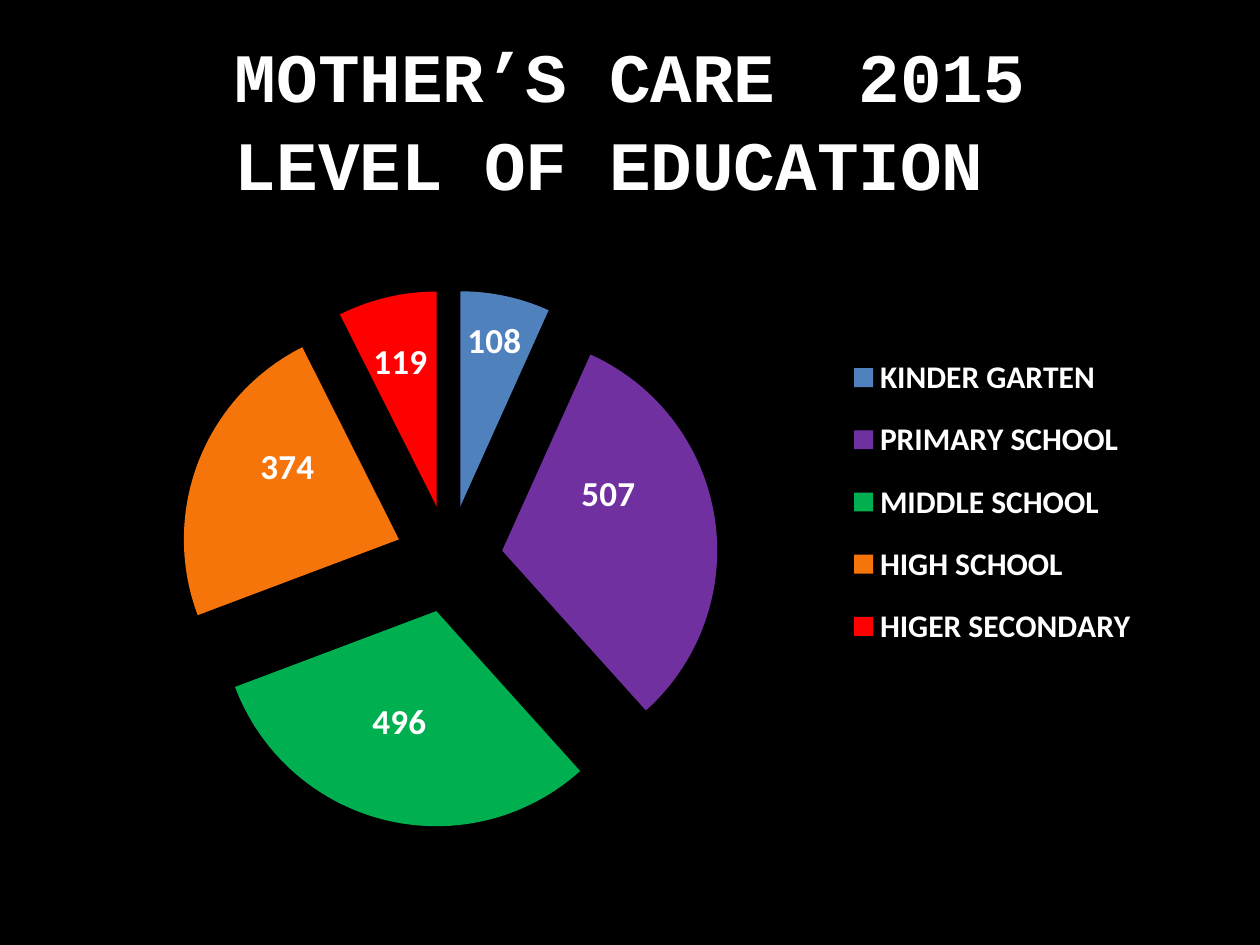
from lxml.etree import SubElement
from pptx import Presentation
from pptx.chart.data import CategoryChartData
from pptx.dml.color import RGBColor
from pptx.enum.chart import XL_CHART_TYPE, XL_LABEL_POSITION, XL_LEGEND_POSITION
from pptx.enum.text import MSO_ANCHOR, PP_ALIGN
from pptx.oxml.ns import qn
from pptx.util import Pt

WHITE = "FFFFFF"
# name, value, colour, label shift as fractions of the chart
LEVELS = [
    ("KINDER GARTEN", 108, "4F81BD", (0.01, -0.09)),
    ("PRIMARY SCHOOL", 507, "7030A0", (0, -0.06)),
    ("MIDDLE SCHOOL", 496, "00B050", (-0.01, 0.01)),
    ("HIGH SCHOOL", 374, "F5750B", (-0.01, -0.05)),
    ("HIGER SECONDARY", 119, "FF0000", (-0.01, -0.06)),
]


def color(code):
    return RGBColor.from_string(code)


def style(font, name, size, code, bold=True):
    font.name, font.size, font.bold = name, Pt(size), bold
    font.color.rgb = color(code)


def place(owner, index, **spots):
    """Give a chart part a manual layout at a child index."""
    for old in owner.findall(qn("c:layout")):
        owner.remove(old)
    layout = SubElement(owner, qn("c:layout"))
    owner.insert(index, layout)
    manual = SubElement(layout, qn("c:manualLayout"))
    for tag, value in spots.items():
        SubElement(manual, qn(f"c:{tag}")).set("val", str(value))


class Deck:
    head, body = "Courier New", "Calibri"

    def __init__(self):
        self.prs = Presentation()
        self.prs.slide_width, self.prs.slide_height = Pt(720), Pt(540)
        self.slide = self.prs.slides.add_slide(self.prs.slide_layouts[5])
        fill = self.slide.background.fill
        fill.solid()
        fill.fore_color.rgb = color("000000")

    def title(self, lines, left, top, width, height):
        box = self.slide.shapes.title
        box.left, box.top, box.width, box.height = map(Pt, (left, top, width, height))
        box.text_frame.vertical_anchor = MSO_ANCHOR.MIDDLE
        para = box.text_frame.paragraphs[0]
        para.alignment = PP_ALIGN.CENTER
        para.line_spacing = 1.06
        for i, line in enumerate(lines):
            if i:
                para.add_line_break()
            run = para.add_run()
            run.text = line
            style(run.font, self.head, 39.6, WHITE)

    def pie(self, levels, left, top, width, height):
        names, values, fills, shifts = zip(*levels)
        data = CategoryChartData()
        data.categories = names
        data.add_series("Series 1", values)
        chart = self.slide.shapes.add_chart(
            XL_CHART_TYPE.PIE, *map(Pt, (left, top, width, height)), data).chart
        chart.has_title = False
        style(chart.font, self.body, 18, "000000", False)
        plot = chart.plots[0]
        plot.vary_by_categories = True
        area = chart._chartSpace.find(".//" + qn("c:plotArea"))
        place(area, 0, layoutTarget="inner", xMode="edge", yMode="edge",
              x=0.13, y=0.1, w=0.47, h=0.81)
        self.legend(chart)
        self.slices(plot.series[0], fills, shifts)

    def legend(self, chart):
        chart.has_legend = True
        key = chart.legend
        key.position = XL_LEGEND_POSITION.RIGHT
        key.include_in_layout = False
        style(key.font, self.body, 18, WHITE)
        place(key._element, 1, xMode="edge", yMode="edge",
              x=0.7, y=0.17, w=0.28, h=0.5)

    def slices(self, series, fills, shifts):
        root = series._element
        burst = SubElement(root, qn("c:explosion"))
        burst.set("val", "25")
        root.find(qn("c:tx")).addnext(burst)
        labels = series.data_labels
        labels.show_value = True
        style(labels.font, self.body, 20, WHITE)
        for i, code in enumerate(fills):
            point = series.points[i]
            point.format.fill.solid()
            point.format.fill.fore_color.rgb = color(code)
            style(point.data_label.font, self.body, 20, WHITE)
            point.data_label.position = XL_LABEL_POSITION.CENTER
        for label, (x, y) in zip(labels._element.findall(qn("c:dLbl")), shifts):
            place(label, 1, x=x, y=y)


def main():
    deck = Deck()
    deck.title(["MOTHER’S CARE  2015", "LEVEL OF EDUCATION "], 36, 21.6, 648, 90)
    deck.pie(LEVELS, 18, 126, 653.76, 383.04)
    deck.prs.save("out.pptx")


if __name__ == "__main__":
    main()
